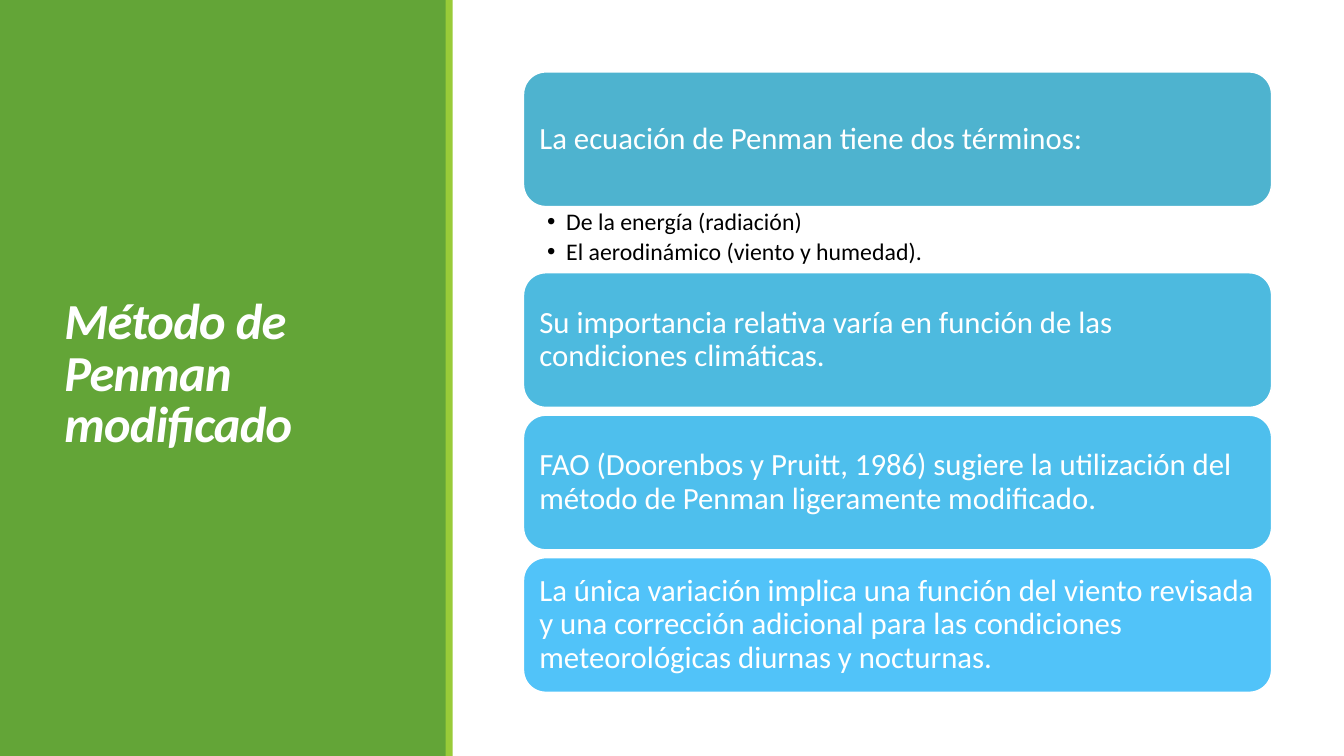
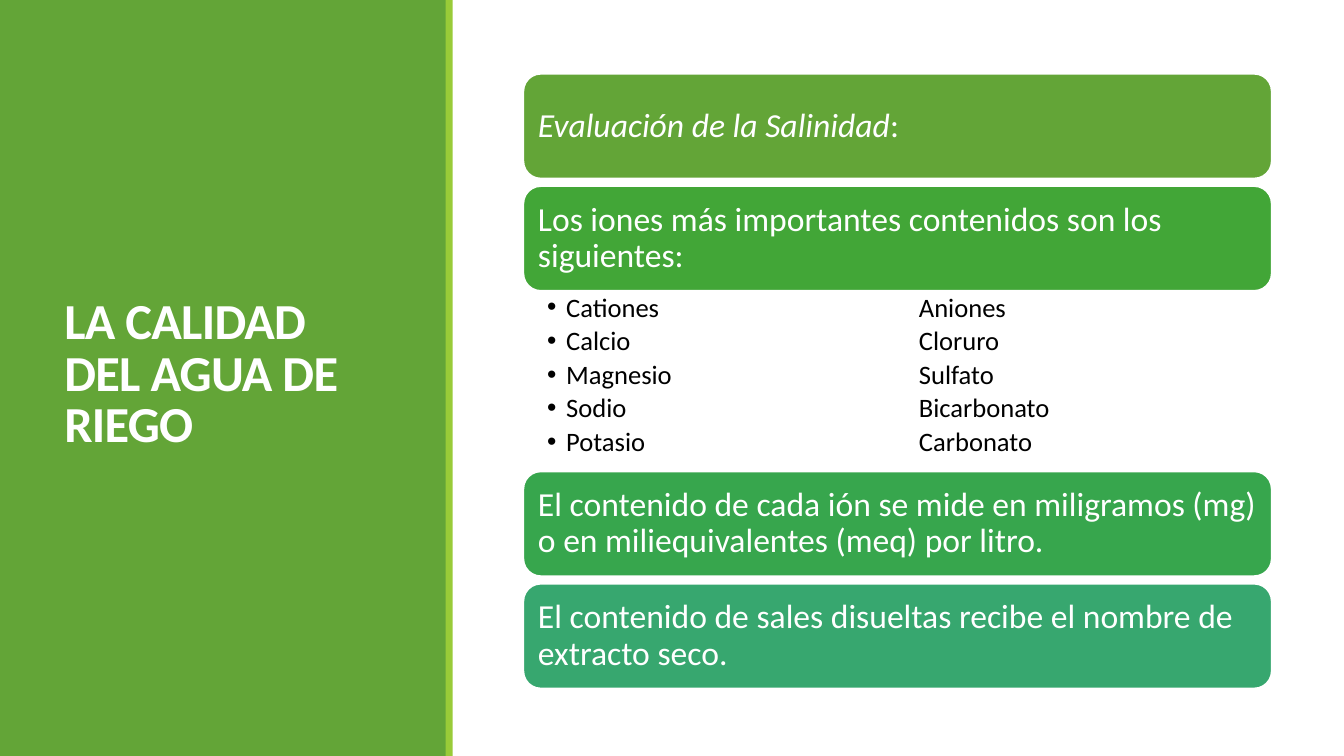
from dataclasses import dataclass

from lxml import etree
from pptx import Presentation
from pptx.dml.color import RGBColor
from pptx.enum.shapes import MSO_SHAPE
from pptx.enum.text import MSO_ANCHOR, MSO_AUTO_SIZE, PP_ALIGN
from pptx.oxml.ns import qn
from pptx.util import Cm, Pt

RECT, ROUND = MSO_SHAPE.RECTANGLE, MSO_SHAPE.ROUNDED_RECTANGLE
MIDDLE, TOP = MSO_ANCHOR.MIDDLE, MSO_ANCHOR.TOP
LEFT = PP_ALIGN.LEFT
FIXED = MSO_AUTO_SIZE.NONE

FONT = "Calibri"
GREEN, LIME, WHITE, BLACK = "63A537", "99CB38", "FFFFFF", "000000"
WIDE, HIGH = 33.87, 19.05
CARD_X, CARD_W, GAP = 13.19, 18.86, 0.19
PAIR_X = 23.16  # left edge of the second list column


@dataclass
class Card:
    text: str
    fill: str
    lead: str = ""  # opening words in italics


@dataclass
class Points:
    lines: list[str]
    high: float
    size: float
    pair: list[str]  # second column, without bullets


@dataclass
class Page:
    title: str
    slant: bool
    top: float
    high: float
    size: float
    stack: list[Card | Points]


PAGES = [
    Page("Método de Penman modificado", True, 1.81, 3.4, 22, [
        Card("La ecuación de Penman tiene dos términos:", "4EB3CF"),
        Points(["De la energía (radiación)",
                "El aerodinámico (viento y humedad)."], 1.66, 17, []),
        Card("Su importancia relativa varía en función de las condiciones "
             "climáticas.", "4DBADF"),
        Card("FAO (Doorenbos y Pruitt, 1986) sugiere la utilización del "
             "método de Penman ligeramente modificado.", "4EBFED"),
        Card("La única variación implica una función del viento revisada y "
             "una corrección adicional para las condiciones meteorológicas "
             "diurnas y nocturnas.", "51C3F9"),
    ]),
    Page("LA CALIDAD DEL AGUA DE RIEGO", False, 1.86, 2.64, 24, [
        Card(":", GREEN, lead="Evaluación de la Salinidad"),
        Card("Los iones más importantes contenidos son los siguientes:",
             "42A637"),
        Points(["Cationes", "Calcio", "Magnesio", "Sodio", "Potasio"],
               4.55, 19,
               ["Aniones", "Cloruro", "Sulfato", "Bicarbonato", "Carbonato"]),
        Card("El contenido de cada ión se mide en miligramos (mg) o en "
             "miliequivalentes (meq) por litro.", "37A64D"),
        Card("El contenido de sales disueltas recibe el nombre de extracto "
             "seco.", "37A76F"),
    ]),
]


def tint(code: str) -> RGBColor:
    return RGBColor.from_string(code)


def place(shape, x: float, y: float, w: float, h: float) -> None:
    shape.left, shape.top = Cm(x), Cm(y)
    shape.width, shape.height = Cm(w), Cm(h)


def dot(para) -> None:
    """Give a paragraph a hanging bullet."""
    props = para._p.get_or_add_pPr()
    props.set("marL", str(Cm(0.48)))
    props.set("indent", str(Cm(-0.48)))
    etree.SubElement(props, qn("a:buFont")).set("typeface", "Arial")
    etree.SubElement(props, qn("a:buChar")).set("char", "•")


def write(shape, lines: list[str], *, size: float, color: str = WHITE,
          bold: bool = False, slant: bool = False, lead: str = "",
          kern: float = 0, line: float = 0.9, after: float = 0,
          anchor=MIDDLE, pad=(0.25, 0.13, 0.25, 0.13),
          mark: bool = False) -> None:
    frame = shape.text_frame
    frame.word_wrap, frame.auto_size = True, FIXED
    frame.vertical_anchor = anchor
    (frame.margin_left, frame.margin_top,
     frame.margin_right, frame.margin_bottom) = map(Cm, pad)
    for i, text in enumerate(lines):
        para = frame.add_paragraph() if i else frame.paragraphs[0]
        para.alignment, para.line_spacing = LEFT, line
        para.space_before, para.space_after = Pt(0), Pt(after)
        if mark:
            dot(para)
        for words, lean in ((lead, True), (text, slant)):
            if not words:
                continue
            run = para.add_run()
            run.text = words
            font = run.font
            font.name, font.size = FONT, Pt(size)
            font.bold, font.italic = bold, lean
            font.color.rgb = tint(color)
            if kern:
                run._r.get_or_add_rPr().set("spc", str(int(kern * 100)))


def block(slide, kind, x: float, y: float, w: float, h: float,
          fill: str, edge: str = ""):
    shape = slide.shapes.add_shape(kind, Cm(x), Cm(y), Cm(w), Cm(h))
    shape.shadow.inherit = False
    shape.fill.solid()
    shape.fill.fore_color.rgb = tint(fill)
    if edge:
        shape.line.color.rgb = tint(edge)
        shape.line.width = Pt(1.25)
    else:
        shape.line.fill.background()
    return shape


def side(slide, page: Page) -> None:
    """Draw the green panel, its edge and the title on it."""
    title = slide.shapes.title
    for x, w, fill in ((0, 11.25, GREEN), (11.23, 0.18, LIME)):
        band = block(slide, RECT, x, 0, w, HIGH, fill)
        title.element.addprevious(band.element)
    place(title, 1.37, 1.45, 8.56, 16.03)
    write(title, [page.title], size=36, bold=True, slant=page.slant,
          kern=-0.5, line=0.85, after=6)


def points(slide, item: Points, y: float) -> None:
    """Fill the body with bullets, with a plain column beside them."""
    body = slide.placeholders[1]
    place(body, CARD_X, y, CARD_W, item.high)
    look = dict(size=item.size, color=BLACK, anchor=TOP,
                after=item.size * 0.18)
    write(body, item.lines, pad=(0.6, 0.08, 0.45, 0.08), mark=True, **look)
    if item.pair:
        box = slide.shapes.add_textbox(
            Cm(PAIR_X), Cm(y), Cm(CARD_X + CARD_W - PAIR_X), Cm(item.high))
        write(box, item.pair, pad=(0, 0.08, 0, 0.08), **look)


def build(deck, page: Page) -> None:
    slide = deck.slides.add_slide(deck.slide_layouts[1])
    side(slide, page)
    # Cards follow each other with a gap; a list sits tight between two
    y, last = page.top, None
    for item in page.stack:
        if isinstance(item, Points):
            points(slide, item, y)
            y += item.high
        else:
            if isinstance(last, Card):
                y += GAP
            card = block(slide, ROUND, CARD_X, y, CARD_W, page.high,
                         item.fill, WHITE)
            write(card, [item.text], size=page.size, lead=item.lead,
                  pad=(0.24,) * 4)
            y += page.high
        last = item


def main() -> None:
    deck = Presentation()
    deck.slide_width, deck.slide_height = Cm(WIDE), Cm(HIGH)
    for page in PAGES:
        build(deck, page)
    deck.save("out.pptx")


if __name__ == "__main__":
    main()
